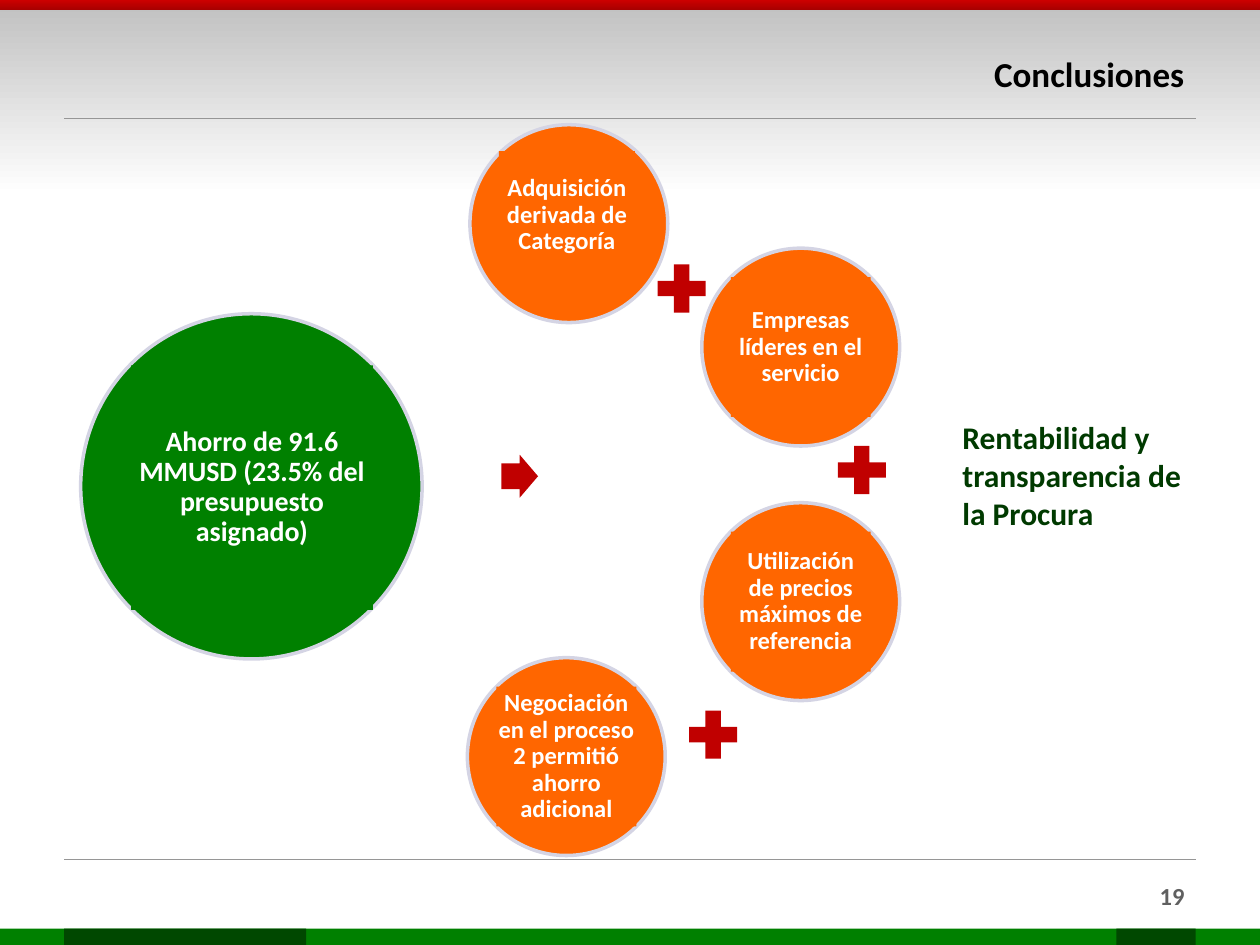
from lxml import etree
from pptx import Presentation
from pptx.dml.color import RGBColor
from pptx.enum.shapes import MSO_CONNECTOR, MSO_SHAPE
from pptx.enum.text import MSO_ANCHOR, PP_ALIGN
from pptx.oxml.ns import qn
from pptx.util import Inches, Pt

RECT, OVAL = MSO_SHAPE.RECTANGLE, MSO_SHAPE.OVAL
ARROW, PLUS = MSO_SHAPE.RIGHT_ARROW, MSO_SHAPE.MATH_PLUS
STRAIGHT = MSO_CONNECTOR.STRAIGHT
TOP, MIDDLE = MSO_ANCHOR.TOP, MSO_ANCHOR.MIDDLE
LEFT, CENTER, RIGHT = PP_ALIGN.LEFT, PP_ALIGN.CENTER, PP_ALIGN.RIGHT

BLACK = RGBColor(0x00, 0x00, 0x00)
WHITE = RGBColor(0xFF, 0xFF, 0xFF)
SILVER = RGBColor(0xC0, 0xC0, 0xC0)
RULE_GRAY = RGBColor(0x96, 0x96, 0x96)
NUMBER_GRAY = RGBColor(0x60, 0x60, 0x60)
GREEN = RGBColor(0x00, 0x80, 0x00)
DARK_GREEN = RGBColor(0x00, 0x48, 0x00)
RESULT_GREEN = RGBColor(0x00, 0x3A, 0x00)
ORANGE = RGBColor(0xFF, 0x66, 0x00)
RIM = RGBColor(0xD4, 0xD4, 0xE4)
RED = RGBColor(0xCC, 0x00, 0x00)
DEEP_RED = RGBColor(0xA8, 0x00, 0x00)
SIGN_RED = RGBColor(0xC0, 0x00, 0x00)

COLUMNS, ROWS = 100, 75
CELL = Inches(0.1)
MARGIN = 5.1
FACTOR_SIZE = 15.7
SIGN_SIZE = 5.2
FACTORS = [
    ("Adquisición derivada de Categoría", 37.3, 9.9, (2.3, 2.1, 10.8, 10.2)),
    ("Empresas líderes en el servicio", 55.7, 19.7, (2.3, 2.3, 11.1, 11.1)),
    ("Utilización de precios máximos de referencia", 55.7, 39.9, (2.3, 2.3, 11.1, 11.1)),
    ("Negociación en el proceso 2 permitió ahorro adicional", 37.1, 52.2, (2.3, 2.3, 11.1, 11.1)),
]
PLUS_CORNERS = [(51.5, 20.3), (65.8, 34.7), (54, 55.7)]


def cells(*lengths):
    """Turn grid cells into slide lengths."""
    return [round(length * CELL) for length in lengths]


def add_filled(shapes, preset, box, color, rim=None):
    """Add a flat preset shape with an optional rim."""
    shape = shapes.add_shape(preset, *cells(*box))
    shape.shadow.inherit = False
    shape.fill.solid()
    shape.fill.fore_color.rgb = color
    if rim is None:
        shape.line.fill.background()
    else:
        shape.line.color.rgb = rim
        shape.line.width = Pt(2)
    return shape


def add_gradient(shapes, box, first, last):
    """Add a rectangle shaded from top to bottom."""
    band = add_filled(shapes, RECT, box, first)
    band.fill.gradient()
    band.fill.gradient_angle = 270
    for stop, color in zip(band.fill.gradient_stops, (first, last)):
        stop.color.rgb = color


def write(shape, words, size, color, align, anchor, inset=None):
    """Write one bold paragraph in a shape."""
    frame = shape.text_frame
    frame.word_wrap = True
    frame.vertical_anchor = anchor
    if inset is not None:
        frame.margin_left = frame.margin_right = Inches(inset)
        frame.margin_top = frame.margin_bottom = Inches(inset)
    paragraph = frame.paragraphs[0]
    paragraph.alignment = align
    run = paragraph.add_run()
    run.text = words
    run.font.name = "Calibri"
    run.font.size = Pt(size)
    run.font.bold = True
    run.font.color.rgb = color
    return paragraph


def add_rule(shapes, row):
    """Draw a thin rule between the side margins."""
    rule = shapes.add_connector(STRAIGHT, *cells(MARGIN, row, COLUMNS - MARGIN, row))
    rule.line.color.rgb = RULE_GRAY
    rule.line.width = Pt(0.75)
    etree.SubElement(rule._element.spPr, qn("a:effectLst"))


def add_header(slide, box):
    """Place the shaded header, its rule and the title."""
    left, top, width, height = box
    add_gradient(slide.shapes, box, SILVER, WHITE)
    add_gradient(slide.shapes, (left, top, width, 0.8), RED, DEEP_RED)
    add_rule(slide.shapes, top + 9.4)
    title = slide.shapes.title
    title.left, title.top, title.width, title.height = cells(
        left + width / 4, top + 3, width * 0.7, 5.6)
    write(title, "Conclusiones", 20, BLACK, RIGHT, MIDDLE)


def add_footer(slide, box):
    """Place the footer rule, page number and green bars."""
    left, top, width, height = box
    bar_top, bar_height = top + height - 1.3, 1.3
    add_rule(slide.shapes, top)
    for offset, length, color in [(0, width, GREEN), (MARGIN, 19.2, DARK_GREEN),
                                  (88.6, 6.3, DARK_GREEN)]:
        add_filled(slide.shapes, RECT, (left + offset, bar_top, length, bar_height), color)
    number = slide.shapes.add_textbox(*cells(left + 90.2, top + 1.2, 4.8, 3.2))
    write(number, "19", 14, NUMBER_GRAY, RIGHT, TOP)


def add_circle(slide, box, label_box, words, size, color, inset):
    """Group a rimmed circle with the label inside it."""
    left, top, width, height = box
    label_left, label_top, label_width, label_height = label_box
    group = slide.shapes.add_group_shape()
    add_filled(group.shapes, OVAL, box, color, RIM)
    label = add_filled(group.shapes, RECT, (left + label_left, top + label_top,
                                            label_width, label_height), color)
    write(label, words, size, WHITE, CENTER, MIDDLE, inset).line_spacing = 0.9


def add_equation(slide, box):
    """Place the savings, the factors that add up to them and the result."""
    left, top, width, height = box
    add_circle(slide, (left, top + 15, 27.1, 27.4), (4, 4.1, 19.2, 19.4),
               "Ahorro de 91.6 MMUSD (23.5% del presupuesto asignado)", 16, GREEN, 0.02)
    for words, column, row, label_box in FACTORS:
        add_circle(slide, (column, row, FACTOR_SIZE, FACTOR_SIZE), label_box,
                   words, 14, ORANGE, 0.01)
    arrow = add_filled(slide.shapes, ARROW, (left + 33.4, top + 26.2, 2.9, 3.4), SIGN_RED)
    arrow.adjustments[0] = 0.6
    for column, row in PLUS_CORNERS:
        add_filled(slide.shapes, PLUS, (column, row, SIGN_SIZE, SIGN_SIZE), SIGN_RED)
    result = slide.shapes.add_textbox(*cells(left + width - 19.6, top + 22.8, 19.6, 10.1))
    write(result, "Rentabilidad y transparencia de la Procura", 18, RESULT_GREEN, LEFT, TOP)


def main():
    """Build and save the conclusions slide."""
    deck = Presentation()
    deck.slide_width, deck.slide_height = cells(COLUMNS, ROWS)
    slide = deck.slides.add_slide(deck.slide_layouts.get_by_name("Title Only"))
    add_header(slide, (0, 0, COLUMNS, 15.5))
    title = slide.shapes.title._element
    title.getparent().append(title)
    add_footer(slide, (0, 68.2, COLUMNS, 6.8))
    add_equation(slide, (6.4, 9.9, 88.6, 58))
    deck.save("out.pptx")


if __name__ == "__main__":
    main()
